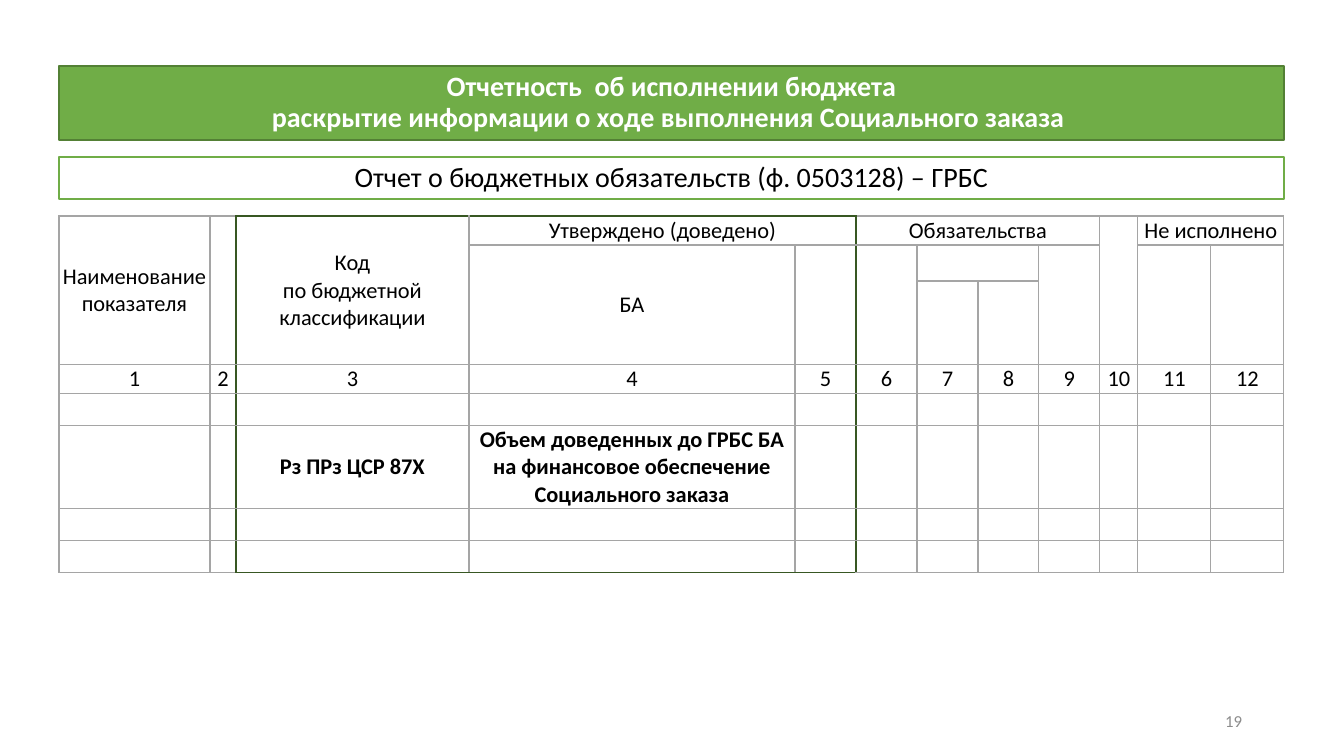
from typing import NamedTuple

from lxml.etree import SubElement
from pptx import Presentation
from pptx.dml.color import RGBColor as Rgb
from pptx.enum.shapes import MSO_SHAPE as Shape
from pptx.enum.text import MSO_ANCHOR as Anchor, MSO_AUTO_SIZE as Fit, PP_ALIGN as Align
from pptx.oxml.ns import qn
from pptx.util import Emu, Pt

HUES = {"green": "70AD47", "edge": "538035", "frame": "385723", "grid": "A5A5A5",
        "white": "FFFFFF", "black": "000000", "note": "8C8C8C"}
FONT = "Calibri"
LEFT, WIDE = 59, 1225


class Box(NamedTuple):
    left: int
    top: int
    width: int
    height: int


class Style(NamedTuple):
    size: int
    hue: str = "black"
    bold: bool = False
    align: Align = Align.CENTER
    gap: float = 1.0


class Entry(NamedTuple):
    row: int
    col: int
    text: str = ""
    rows: int = 1
    cols: int = 1
    bold: bool = False


def px(num: int) -> Emu:
    return Emu(round(num * 914400 / 100.8))


def rgb(hue: str) -> Rgb:
    return Rgb.from_string(HUES[hue])


def place(shape, box: Box) -> None:
    shape.left, shape.top, shape.width, shape.height = map(px, box)


def paint(shape, fill: str, line: str) -> None:
    shape.fill.solid()
    shape.fill.fore_color.rgb = rgb(fill)
    shape.line.color.rgb = rgb(line)
    shape.line.width = Pt(1)


def write(frame, text: str, style: Style) -> None:
    frame.text = text
    frame.word_wrap = True
    for para in frame.paragraphs:
        para.alignment = style.align
        para.line_spacing = style.gap
        para.space_before = Pt(0)
        for run in para.runs:
            run.font.name = FONT
            run.font.size = Pt(style.size)
            run.font.bold = style.bold
            run.font.color.rgb = rgb(style.hue)


def border(cell, side: str, hue: str) -> None:
    line = SubElement(cell._tc.get_or_add_tcPr(), qn(f"a:ln{side}"), w=str(Pt(1)))
    fill = SubElement(line, qn("a:solidFill"))
    SubElement(fill, qn("a:srgbClr"), val=HUES[hue])


# Table layout
COLS = [151, 26, 233, 326, 61, 61, 61, 61, 61, 38, 73, 73]
ROWS = [29, 36, 83, 29, 32, 83, 32, 32]
HEADS = [
    Entry(0, 0, "Наименование показателя", rows=3),
    Entry(0, 1, rows=3),
    Entry(0, 2, "Код\vпо бюджетной классификации", rows=3),
    Entry(0, 3, "Утверждено (доведено)", cols=2),
    Entry(0, 5, "Обязательства", cols=4),
    Entry(0, 9, rows=3),
    Entry(0, 10, "Не исполнено", cols=2),
    Entry(1, 3, "БА", rows=2),
    *[Entry(1, col, rows=2) for col in (4, 5, 8, 10, 11)],
    Entry(1, 6, cols=2),
]
MARKS = [Entry(3, col, str(col + 1)) for col in range(len(COLS))]
FACTS = [
    Entry(5, 2, "Рз ПРз ЦСР 87Х", bold=True),
    Entry(5, 3, "Объем доведенных до ГРБС БА на финансовое обеспечение Социального заказа",
          bold=True),
]
CORE = range(2, 5)  # columns inside the dark green frame


def edges(cell, row: int, col: int) -> None:
    """Draw the grid, with a dark green frame round the core columns."""
    end = col + cell.span_width if cell.is_merge_origin else col + 1
    last = row + cell.span_height if cell.is_merge_origin else row + 1
    sides = (CORE.start, CORE.stop)
    dark = {"L": col in sides, "R": end in sides,
            "T": row == 0 and col in CORE,
            "B": last == len(ROWS) and col in CORE}
    for side, on in dark.items():
        border(cell, side, "frame" if on else "grid")


def grid(slide) -> None:
    box = Box(LEFT, 216, sum(COLS), sum(ROWS))
    table = slide.shapes.add_table(len(ROWS), len(COLS), *map(px, box)).table
    table.first_row = table.horz_banding = False
    for col, width in zip(table.columns, COLS):
        col.width = px(width)
    for row, height in zip(table.rows, ROWS):
        row.height = px(height)
    for item in HEADS + MARKS + FACTS:
        cell = table.cell(item.row, item.col)
        if item.rows * item.cols > 1:
            cell.merge(table.cell(item.row + item.rows - 1, item.col + item.cols - 1))
        if item.text:
            write(cell.text_frame, item.text, Style(16, bold=item.bold))
    for row in range(len(ROWS)):
        for col in range(len(COLS)):
            cell = table.cell(row, col)
            cell.margin_left = cell.margin_right = cell.margin_top = px(1)
            cell.margin_bottom = 0
            cell.vertical_anchor = Anchor.MIDDLE
            edges(cell, row, col)
            cell.fill.background()
    table.cell(0, CORE.start + 1).vertical_anchor = Anchor.BOTTOM


def main() -> None:
    deck = Presentation()
    deck.slide_width, deck.slide_height = px(1344), px(756)
    slide = deck.slides.add_slide(deck.slide_layouts[5])

    # Title band
    title = slide.shapes.title
    place(title, Box(LEFT, 66, WIDE, 74))
    paint(title, "green", "edge")
    write(title.text_frame,
          "Отчетность  об исполнении бюджета\v"
          "раскрытие информации о ходе выполнения Социального заказа ",
          Style(20, "white", True, gap=0.9))
    title.text_frame.auto_size = Fit.NONE
    title.text_frame.vertical_anchor = Anchor.MIDDLE

    # Report name
    report = slide.shapes.add_shape(Shape.RECTANGLE, *map(px, Box(LEFT, 157, WIDE, 42)))
    report.shadow.inherit = False
    paint(report, "white", "green")
    write(report.text_frame, "Отчет о бюджетных обязательств (ф. 0503128) – ГРБС",
          Style(20, gap=0.9))
    report.text_frame.vertical_anchor = Anchor.MIDDLE

    # Report table
    grid(slide)

    # Page number
    page = slide.shapes.add_textbox(*map(px, Box(950, 701, 302, 40)))
    write(page.text_frame, "19", Style(12, "note", align=Align.RIGHT))
    page.text_frame.vertical_anchor = Anchor.MIDDLE

    deck.save("out.pptx")


if __name__ == "__main__":
    main()
